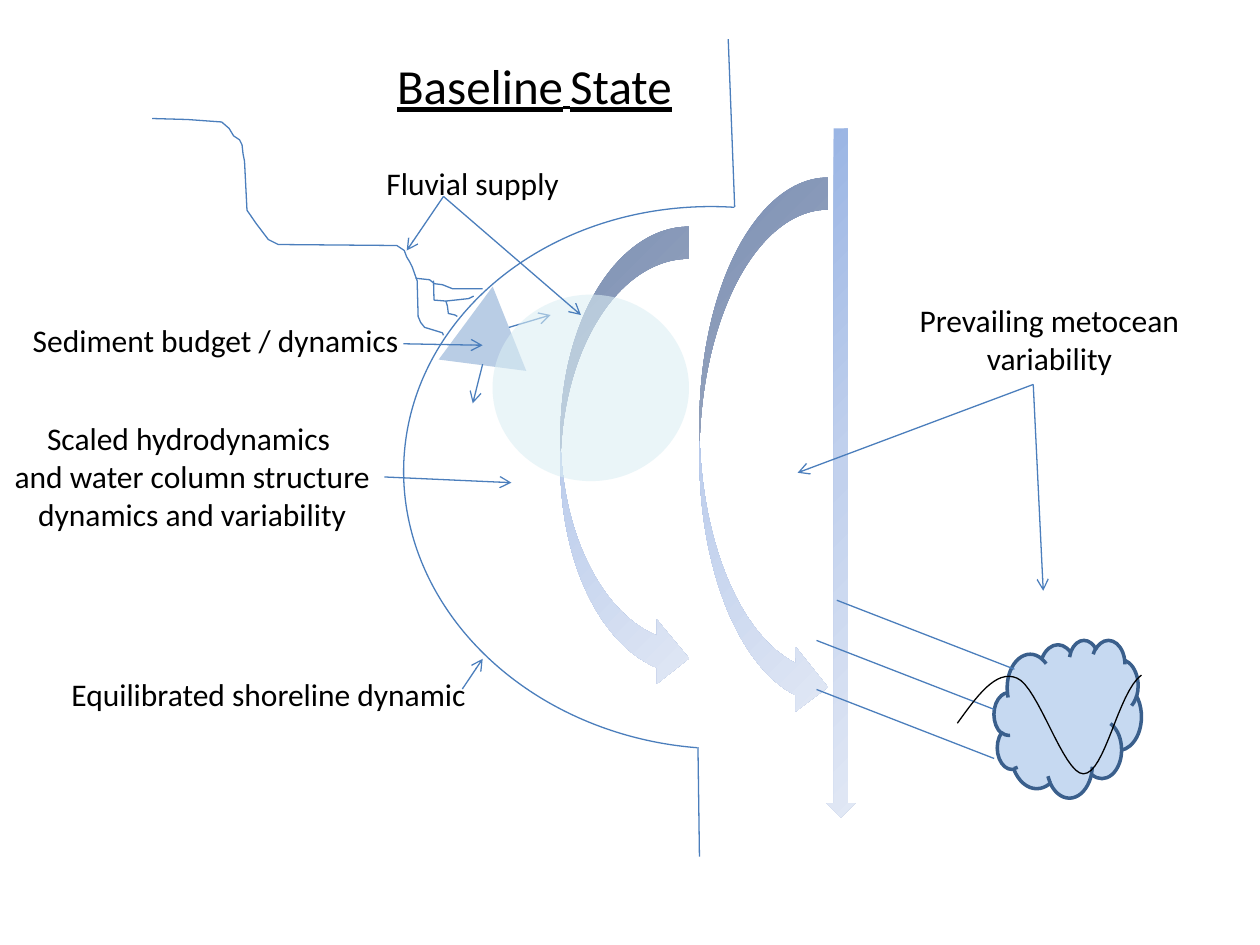
from copy import deepcopy
from pptx import Presentation
from pptx.dml.color import RGBColor
from pptx.enum.shapes import MSO_CONNECTOR, MSO_SHAPE
from pptx.enum.text import MSO_ANCHOR, MSO_AUTO_SIZE, PP_ALIGN
from pptx.oxml.ns import qn
from pptx.util import Cm, Pt
from lxml.etree import SubElement

BLACK = RGBColor(0x00, 0x00, 0x00)
LINE_BLUE = RGBColor(0x4B, 0x7E, 0xBC)
SEDIMENT_BLUE = RGBColor(0xB9, 0xCD, 0xE5)
CLOUD_FILL = RGBColor(0xC6, 0xD9, 0xF1)
CLOUD_EDGE = RGBColor(0x3A, 0x5F, 0x8C)
PLUME = RGBColor(0xDB, 0xEE, 0xF4)
CURRENT_STOPS = [RGBColor(0x9A, 0xB5, 0xE4), RGBColor(0xC2, 0xD1, 0xED),
                 RGBColor(0xE1, 0xE8, 0xF5)]
FONT = "Calibri"

prs = Presentation()
prs.slide_width, prs.slide_height = Cm(25.4), Cm(19.05)
slide = prs.slides.add_slide(prs.slide_layouts[5])


def add_preset(preset, left, top, width, height, fill=None):
    """Add an unlined preset shape without shadow; no fill colour leaves it hollow."""
    shape = slide.shapes.add_shape(preset, Cm(left), Cm(top), Cm(width), Cm(height))
    shape.shadow.inherit = False
    shape.line.fill.background()
    if fill is None:
        shape.fill.background()
    else:
        shape.fill.solid()
        shape.fill.fore_color.rgb = fill
    return shape


def add_line(x1, y1, x2, y2, arrow=True):
    line = slide.shapes.add_connector(
        MSO_CONNECTOR.STRAIGHT, Cm(x1), Cm(y1), Cm(x2), Cm(y2))
    line.line.color.rgb = LINE_BLUE
    line.line.width = Pt(0.75)
    if arrow:
        SubElement(line.line._get_or_add_ln(), qn("a:tailEnd"), type="arrow")
    SubElement(line._element.spPr, qn("a:effectLst"))
    return line


# Title
title = slide.shapes.title
title.left, title.top, title.width, title.height = Cm(7.75), Cm(0.99), Cm(6.1), Cm(1.45)
title.text_frame.word_wrap = False
title.text_frame.auto_size = MSO_AUTO_SIZE.SHAPE_TO_FIT_TEXT
title.text_frame.vertical_anchor = MSO_ANCHOR.TOP
heading = title.text_frame.paragraphs[0]
heading.alignment = PP_ALIGN.LEFT
for words, size in [("Baseline", 28), (" ", 18), ("State", 28)]:
    run = heading.add_run()
    run.text = words
    run.font.name, run.font.size = FONT, Pt(size)
    run.font.underline = True
    run.font.color.rgb = BLACK

# Shoreline
bay = add_preset(MSO_SHAPE.ARC, 8.13, 4.17, 12.7, 10.92)
bay.rotation = 184.5
bay.adjustments[0], bay.adjustments[1] = 162, 53.33
bay.line.color.rgb = LINE_BLUE
bay.line.width = Pt(0.75)
add_line(14.81, 4.17, 14.68, 0.79, arrow=False)
add_line(14.07, 15.06, 14.1, 17.27, arrow=False)

# Sediment lobe and currents
lobe = add_preset(MSO_SHAPE.ISOSCELES_TRIANGLE, 8.94, 5.77, 1.78, 1.6, SEDIMENT_BLUE)
lobe.rotation = 7.4
add_line(9.73, 7.34, 9.53, 8.13)
add_line(10.26, 6.6, 11.1, 6.35)
add_line(8.13, 6.93, 9.73, 6.96)

for preset, *box in [
    (MSO_SHAPE.DOWN_ARROW, 16.66, 2.59, 0.58, 13.89),
    (MSO_SHAPE.CURVED_RIGHT_ARROW, 14.1, 3.58, 2.59, 10.92),
    (MSO_SHAPE.CURVED_RIGHT_ARROW, 11.3, 4.57, 2.59, 9.35),
]:
    current = add_preset(preset, *box)
    current.fill.gradient()
    current.fill.gradient_angle = 315
    stop_list = current._element.spPr.find(qn("a:gradFill")).find(qn("a:gsLst"))
    stop_list.insert(1, deepcopy(stop_list[0]))
    for position, (stop, colour) in enumerate(zip(current.fill.gradient_stops, CURRENT_STOPS)):
        stop.position = position / 2
        stop.color.rgb = colour

# Metocean forcing
add_line(20.83, 7.75, 21.03, 11.91)
add_line(20.83, 7.75, 16.08, 9.53)
storm = add_preset(MSO_SHAPE.CLOUD, 20.04, 12.9, 2.97, 3.18, CLOUD_FILL)
storm.line.color.rgb = CLOUD_EDGE
storm.line.width = Pt(2)
for x, y in [(20.45, 13.49), (20.04, 15.29), (20.04, 14.3)]:
    add_line(x, y, x - 3.58, y - 1.39, arrow=False)

# River channels, and the wave as sampled cubic Bezier pieces
river = [(3.07, 2.39), (3.78, 2.41), (4.47, 2.46), (4.62, 2.59), (4.71, 2.74),
         (4.83, 2.82), (4.88, 2.92), (4.9, 3.1), (4.93, 3.25), (4.98, 4.24),
         (5.05, 4.34), (5.16, 4.5), (5.41, 4.83), (5.51, 4.88), (5.61, 4.93),
         (8, 4.95), (8.15, 5.05), (8.2, 5.18), (8.26, 5.28), (8.31, 5.38),
         (8.41, 5.66), (8.43, 6.38), (8.48, 6.5), (8.56, 6.6), (8.66, 6.63),
         (8.92, 6.71), (8.94, 6.76)]
south_branch = [(8.74, 5.66), (8.75, 6.05), (8.99, 6.07), (9.02, 6.17),
                (9.04, 6.32), (9.17, 6.35), (9.22, 6.38)]
middle_branch = [(8.99, 6.07), (9.45, 6.02), (9.55, 5.97)]
north_branch = [(8.38, 5.61), (8.66, 5.64), (8.76, 5.72), (8.92, 5.74),
                (9.12, 5.82), (9.73, 5.82)]
wave_controls = [(19.3, 14.58), (19.69, 14.05), (20.07, 13.49), (20.5, 13.67),
                 (20.93, 13.84), (21.44, 15.6), (21.84, 15.6),
                 (22.28, 15.6), (22.53, 13.97), (23.01, 13.61)]
wave = [wave_controls[0]]
for first in range(0, 9, 3):
    piece = wave_controls[first:first + 4]
    for step in range(1, 17):
        t = step / 16
        weights = [(1 - t) ** 3, 3 * t * (1 - t) ** 2, 3 * t ** 2 * (1 - t), t ** 3]
        wave.append(tuple(sum(w * point[axis] for w, point in zip(weights, piece))
                          for axis in (0, 1)))

for points, colour in [(river, LINE_BLUE), (south_branch, LINE_BLUE),
                       (middle_branch, LINE_BLUE), (north_branch, LINE_BLUE),
                       (wave, BLACK)]:
    corners = [(Cm(x), Cm(y)) for x, y in points]
    builder = slide.shapes.build_freeform(*corners[0])
    builder.add_line_segments(corners[1:], close=False)
    curve = builder.convert_to_shape()
    curve.shadow.inherit = False
    curve.fill.background()
    curve.line.color.rgb = colour
    curve.line.width = Pt(0.75)

# River plume
plume = add_preset(MSO_SHAPE.OVAL, 9.93, 5.94, 3.96, 3.76, PLUME)
plume_colour = plume._element.spPr.find(qn("a:solidFill"))[0]
SubElement(plume_colour, qn("a:alpha"), val="58000")

# Labels
labels = {}
for words, left, top, width, height, alignment in [
    ("Scaled hydrodynamics \nand water column structure\ndynamics and variability",
     0, 8.33, 7.75, 2.57, PP_ALIGN.CENTER),
    ("Sediment budget / dynamics", 0.41, 6.35, 7.98, 1.02, PP_ALIGN.LEFT),
    ("Prevailing metocean\nvariability", 18.26, 5.94, 5.79, 1.8, PP_ALIGN.CENTER),
    ("Equilibrated shoreline dynamic", 1.19, 13.49, 8.56, 1.02, PP_ALIGN.LEFT),
    ("Fluvial supply", 7.54, 3.18, 4.04, 1.02, PP_ALIGN.LEFT),
]:
    label = slide.shapes.add_textbox(Cm(left), Cm(top), Cm(width), Cm(height))
    label.text_frame.text = words
    label.text_frame.word_wrap = False
    label.text_frame.auto_size = MSO_AUTO_SIZE.SHAPE_TO_FIT_TEXT
    for paragraph in label.text_frame.paragraphs:
        paragraph.alignment = alignment
        font = paragraph.runs[0].font
        font.name, font.size = FONT, Pt(18)
        font.color.rgb = BLACK
    labels[words.split()[0]] = label

# Pointers from the labels
hydrodynamics_pointer = add_line(7.75, 9.63, 10.31, 9.73)
hydrodynamics_pointer.begin_connect(labels["Scaled"], 3)
add_line(9.32, 13.89, 9.73, 13.28)
add_line(8.94, 3.96, 8.2, 5.05)
add_line(8.94, 3.96, 11.71, 6.35)

prs.save("out.pptx")
